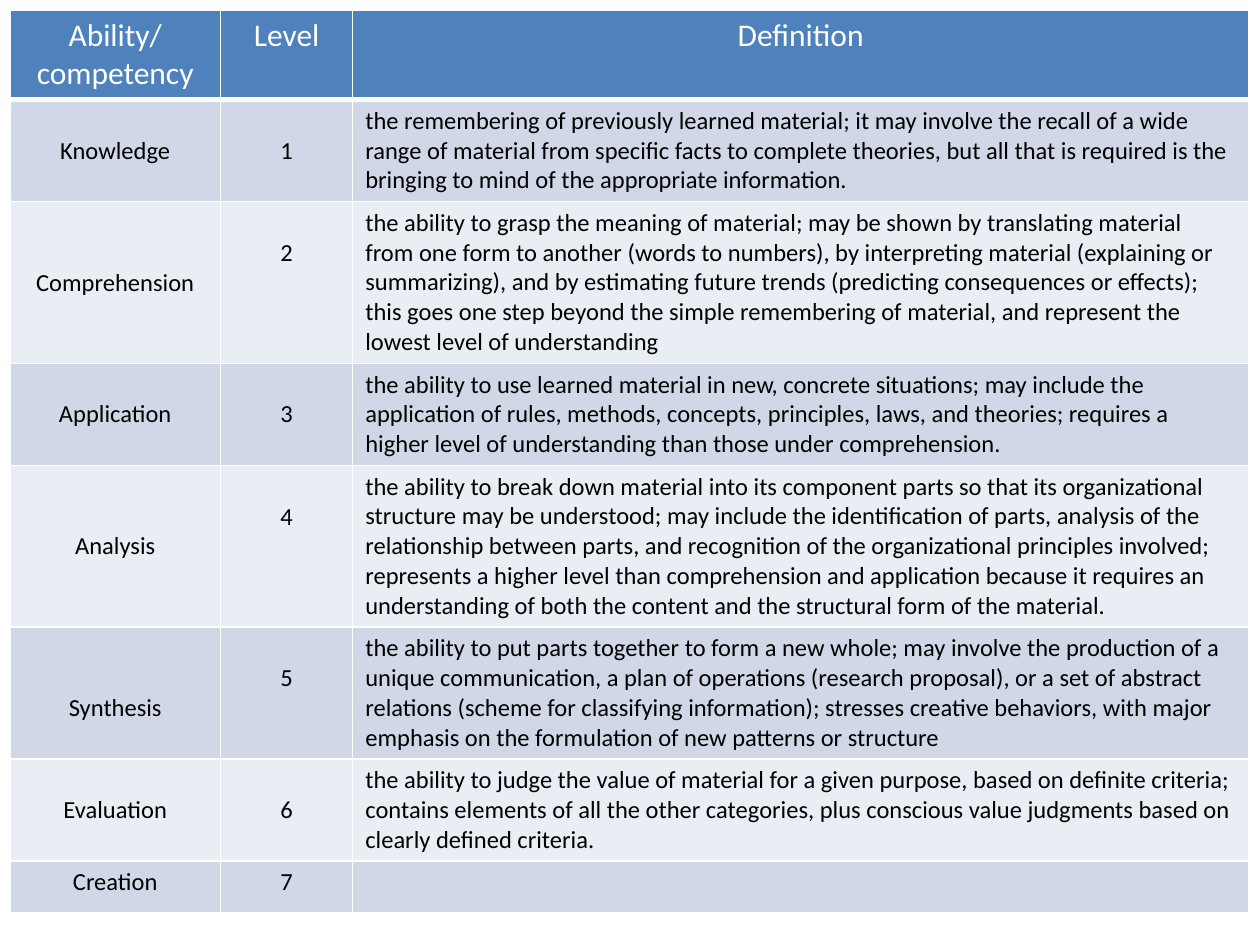
"""Build a slide with a table of learning abilities, their levels and definitions."""
from dataclasses import dataclass

from lxml.etree import SubElement
from pptx import Presentation
from pptx.dml.color import RGBColor
from pptx.enum.text import PP_ALIGN
from pptx.oxml.ns import qn
from pptx.table import _Cell
from pptx.util import Inches, Pt

COLORS = {
    "header": "4F81BD",
    "odd": "D0D8E8",
    "even": "E9EDF4",
    "border": "FFFFFF",
    "header_text": "FFFFFF",
    "body_text": "000000",
}
FONT = "Calibri"
SLIDE_WIDTH, SLIDE_HEIGHT = Inches(10), Inches(7.5)
TABLE_EDGE = Inches(0.08)
COLUMN_PERCENTS = (16.7, 10.5, 71.1)
HEADER_HEIGHT = Inches(0.7)
MINIMUM_HEIGHT = Inches(0.41)
LINE_HEIGHT = Pt(17.1)
ROW_PADDING = Inches(0.08)
CELL_MARGIN = Inches(0.05)
HEADINGS = ("Ability/ competency", "Level", "Definition")


@dataclass(frozen=True)
class Ability:
    """One ability, with its line count and the lines above its name and level."""

    name: str
    definition: str
    lines: int
    name_drop: int = 1
    level_drop: int = 1

    @property
    def height(self) -> int:
        """Return the row height that holds the definition."""
        return max(MINIMUM_HEIGHT, ROW_PADDING + self.lines * LINE_HEIGHT)


@dataclass(frozen=True)
class CellStyle:
    """Colours, text size and horizontal border widths of a cell."""

    fill: str
    text: str
    size: int
    top: int = 1
    bottom: int = 1


ABILITIES = (
    Ability(
        "Knowledge",
        "the remembering of previously learned material; it may involve the recall of a wide "
        "range of material from specific facts to complete theories, but all that is required "
        "is the bringing to mind of the appropriate information.",
        3,
    ),
    Ability(
        "Comprehension",
        "the ability to grasp the meaning of material; may be shown by translating material "
        "from one form to another (words to numbers), by interpreting material (explaining or "
        "summarizing), and by estimating future trends (predicting consequences or effects); "
        "this goes one step beyond the simple remembering of material, and represent the "
        "lowest level of understanding",
        5,
        name_drop=2,
    ),
    Ability(
        "Application",
        "the ability to use learned material in new, concrete situations; may include the "
        "application of rules, methods, concepts, principles, laws, and theories; requires a "
        "higher level of understanding than those under comprehension.",
        3,
    ),
    Ability(
        "Analysis",
        "the ability to break down material into its component parts so that its organizational "
        "structure may be understood; may include the identification of parts, analysis of the "
        "relationship between parts, and recognition of the organizational principles involved; "
        "represents a higher level than comprehension and application because it requires an "
        "understanding of both the content and the structural form of the material.",
        5,
        name_drop=2,
    ),
    Ability(
        "Synthesis",
        "the ability to put parts together to form a new whole; may involve the production of a "
        "unique communication, a plan of operations (research proposal), or a set of abstract "
        "relations (scheme for classifying information); stresses creative behaviors, with major "
        "emphasis on the formulation of new patterns or structure",
        4,
        name_drop=2,
    ),
    Ability(
        "Evaluation",
        "the ability to judge the value of material for a given purpose, based on definite "
        "criteria; contains elements of all the other categories, plus conscious value judgments "
        "based on clearly defined criteria.",
        3,
    ),
    Ability("Creation", "", 1, name_drop=0, level_drop=0),
)


def draw_borders(cell: _Cell, style: CellStyle) -> None:
    """Draw the four borders of a cell."""
    properties = cell._tc.get_or_add_tcPr()
    widths = {"lnL": 1, "lnR": 1, "lnT": style.top, "lnB": style.bottom}
    for side, width in widths.items():
        line = SubElement(properties, qn(f"a:{side}"), w=str(Pt(width)))
        fill = SubElement(line, qn("a:solidFill"))
        SubElement(fill, qn("a:srgbClr"), val=COLORS["border"])


def fill_cell(
    cell: _Cell, text: str, style: CellStyle, centred: bool = True, drop: int = 0
) -> None:
    """Write and format a cell, with its text moved down by whole lines."""
    draw_borders(cell, style)
    cell.fill.solid()
    cell.fill.fore_color.rgb = RGBColor.from_string(COLORS[style.fill])
    cell.margin_top = CELL_MARGIN + drop * LINE_HEIGHT
    cell.text_frame.text = text
    para = cell.text_frame.paragraphs[0]
    para.alignment = PP_ALIGN.CENTER if centred else PP_ALIGN.LEFT
    for span in para.runs:
        span.font.name = FONT
        span.font.size = Pt(style.size)
        span.font.bold = False
        span.font.color.rgb = RGBColor.from_string(COLORS[style.text])


def main() -> None:
    """Build the deck and save it."""
    deck = Presentation()
    deck.slide_width, deck.slide_height = SLIDE_WIDTH, SLIDE_HEIGHT
    page = deck.slides.add_slide(deck.slide_layouts[6])
    column_widths = [int(SLIDE_WIDTH * percent / 100) for percent in COLUMN_PERCENTS]
    row_heights = [HEADER_HEIGHT] + [ability.height for ability in ABILITIES]
    table = page.shapes.add_table(
        len(row_heights), len(column_widths), TABLE_EDGE, TABLE_EDGE,
        sum(column_widths), sum(row_heights),
    ).table
    for column, width in zip(table.columns, column_widths):
        column.width = width
    for row, height in zip(table.rows, row_heights):
        row.height = height

    header_style = CellStyle("header", "header_text", 18, bottom=3)
    for index, heading in enumerate(HEADINGS):
        fill_cell(table.cell(0, index), heading, header_style)
    for level, ability in enumerate(ABILITIES, start=1):
        band = "odd" if level % 2 else "even"
        style = CellStyle(band, "body_text", 14, top=3 if level == 1 else 1)
        fill_cell(table.cell(level, 0), ability.name, style, drop=ability.name_drop)
        fill_cell(table.cell(level, 1), str(level), style, drop=ability.level_drop)
        fill_cell(table.cell(level, 2), ability.definition, style, centred=False)
    deck.save("out.pptx")


if __name__ == "__main__":
    main()
